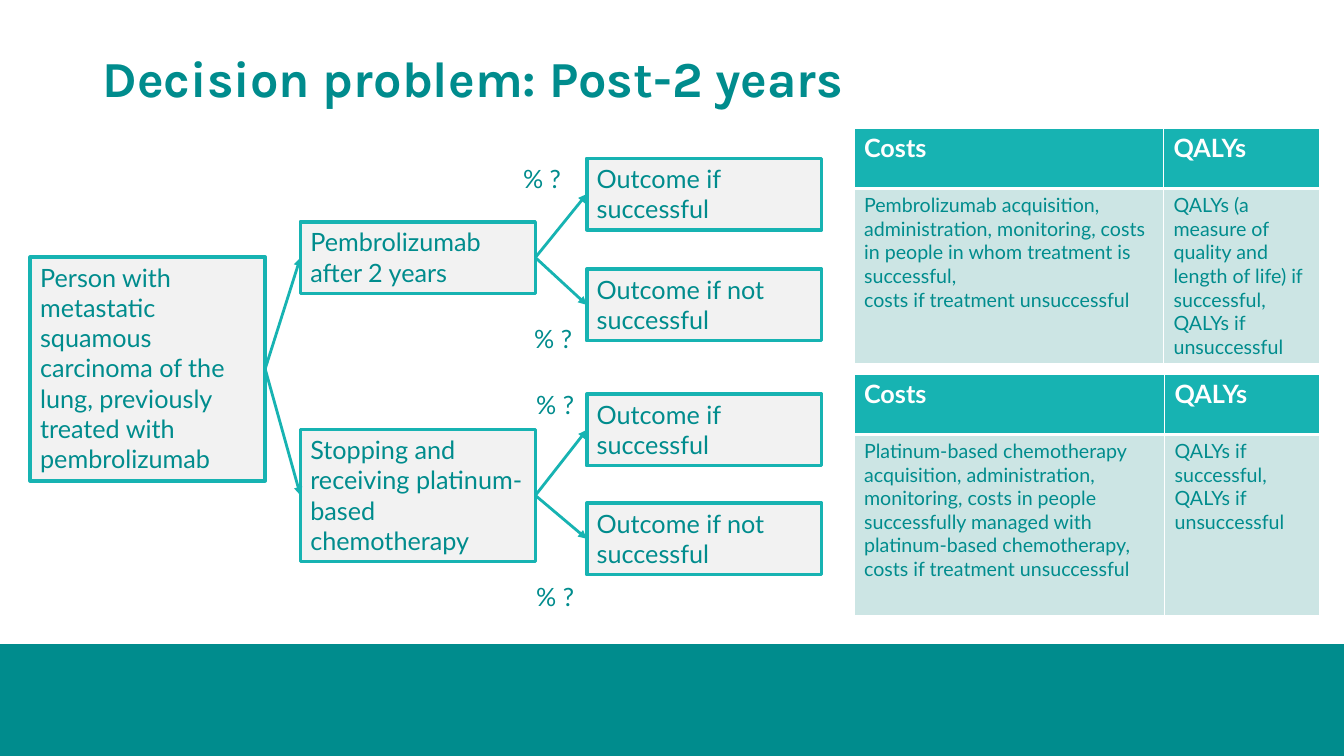
from dataclasses import dataclass

from lxml.etree import SubElement
from pptx import Presentation
from pptx.dml.color import RGBColor
from pptx.enum.shapes import MSO_CONNECTOR, MSO_SHAPE
from pptx.enum.text import MSO_ANCHOR, MSO_AUTO_SIZE
from pptx.oxml.ns import qn
from pptx.shapes.autoshape import Shape
from pptx.slide import Slide
from pptx.table import _Cell
from pptx.text.text import _Paragraph
from pptx.util import Pt

PX = 9144
TEAL = "008C8D"
TURQUOISE = "17B3B2"
PALE_TEAL = "CCE5E4"
GREY = "F2F2F2"
WHITE = "FFFFFF"
LEFT_SITE, RIGHT_SITE = 1, 3
NODE_WIDTH = 233


@dataclass(frozen=True)
class Node:
    key: str
    left: int
    top: int
    height: int
    text: str


@dataclass(frozen=True)
class Label:
    left: int
    top: int
    width: int
    height: int
    text: str
    size: int = 18
    font: str = "Lato"
    bold: bool = False


@dataclass(frozen=True)
class Payoff:
    top: int
    columns: tuple[int, int]
    rows: tuple[int, int]
    costs: tuple[str, ...]
    qalys: tuple[str, ...]


NODES = [
    Node("person", 30, 255, 222, "Person with metastatic squamous carcinoma of the lung, "
         "previously treated with pembrolizumab"),
    Node("continue", 298, 220, 71, "Pembrolizumab after 2 years"),
    Node("stop", 298, 426, 131, "Stopping and receiving platinum-based chemotherapy"),
    Node("continue success", 582, 157, 71, "Outcome if successful"),
    Node("continue failure", 582, 267, 71, "Outcome if not successful"),
    Node("stop success", 582, 391, 71, "Outcome if successful"),
    Node("stop failure", 582, 499, 71, "Outcome if not successful"),
]

BRANCHES = [
    ("person", "continue"),
    ("person", "stop"),
    ("continue", "continue success"),
    ("continue", "continue failure"),
    ("stop", "stop success"),
    ("stop", "stop failure"),
]

PROBABILITIES = [(509, 157), (520, 316), (522, 381), (522, 572)]

PAYOFFS = [
    Payoff(127, (307, 155), (60, 169),
           ("Pembrolizumab acquisition, administration, monitoring, costs in people "
            "in whom treatment is successful,", "costs if treatment unsuccessful"),
           ("QALYs (a measure of quality and length of life) if successful, "
            "QALYs if unsuccessful",)),
    Payoff(371, (308, 154), (60, 180),
           ("Platinum-based chemotherapy acquisition, administration, monitoring, costs in "
            "people successfully managed with platinum-based chemotherapy,",
            "costs if treatment unsuccessful"),
           ("QALYs if successful, QALYs if unsuccessful",)),
]


def rgb(value: str) -> RGBColor:
    return RGBColor.from_string(value)


def add_text(paragraph: _Paragraph, text: str, size: int = 18, color: str = TEAL,
             font: str = "Lato", bold: bool = False) -> None:
    run = paragraph.add_run()
    run.text = text
    run.font.name = font
    run.font.size = Pt(size)
    run.font.bold = bold
    run.font.color.rgb = rgb(color)


def add_rectangle(slide: Slide, left: int, top: int, width: int, height: int, fill: str) -> Shape:
    rectangle = slide.shapes.add_shape(
        MSO_SHAPE.RECTANGLE, left * PX, top * PX, width * PX, height * PX)
    rectangle.shadow.inherit = False
    rectangle.fill.solid()
    rectangle.fill.fore_color.rgb = rgb(fill)
    rectangle.line.fill.background()
    return rectangle


def add_node(slide: Slide, node: Node) -> Shape:
    box = add_rectangle(slide, node.left, node.top, NODE_WIDTH, node.height, GREY)
    box.line.color.rgb = rgb(TURQUOISE)
    box.line.width = Pt(2.5)
    frame = box.text_frame
    frame.word_wrap = True
    frame.auto_size = MSO_AUTO_SIZE.SHAPE_TO_FIT_TEXT
    frame.vertical_anchor = MSO_ANCHOR.TOP
    paragraph = frame.paragraphs[0]
    paragraph.alignment = 1
    add_text(paragraph, node.text)
    return box


def add_branch(slide: Slide, parent: Shape, child: Shape) -> None:
    arrow = slide.shapes.add_connector(MSO_CONNECTOR.STRAIGHT, 0, 0, 0, 0)
    arrow.begin_connect(parent, RIGHT_SITE)
    arrow.end_connect(child, LEFT_SITE)
    arrow.line.color.rgb = rgb(TURQUOISE)
    arrow.line.width = Pt(2)
    properties = arrow.element.spPr
    SubElement(properties.find(qn("a:ln")), qn("a:tailEnd"), type="triangle")
    SubElement(properties, qn("a:effectLst"))


def add_label(slide: Slide, label: Label) -> _Paragraph:
    box = slide.shapes.add_textbox(
        label.left * PX, label.top * PX, label.width * PX, label.height * PX)
    box.text_frame.word_wrap = True
    box.text_frame.vertical_anchor = MSO_ANCHOR.MIDDLE
    paragraph = box.text_frame.paragraphs[0]
    add_text(paragraph, label.text, label.size, font=label.font, bold=label.bold)
    return paragraph


def add_borders(cell: _Cell, bottom: int) -> None:
    properties = cell._tc.get_or_add_tcPr()
    for side, points in {"L": 1, "R": 1, "T": 1, "B": bottom}.items():
        border = SubElement(properties, qn(f"a:ln{side}"), w=str(Pt(points)))
        SubElement(SubElement(border, qn("a:solidFill")), qn("a:srgbClr"), val=WHITE)


def fill_cell(cell: _Cell, lines: tuple[str, ...], header: bool) -> None:
    add_borders(cell, 3 if header else 1)
    cell.fill.solid()
    cell.fill.fore_color.rgb = rgb(TURQUOISE if header else PALE_TEAL)
    frame = cell.text_frame
    for index, line in enumerate(lines):
        paragraph = frame.add_paragraph() if index else frame.paragraphs[0]
        if header:
            add_text(paragraph, line, 18, WHITE, bold=True)
        else:
            add_text(paragraph, line, 14)


def add_payoff(slide: Slide, payoff: Payoff) -> None:
    table = slide.shapes.add_table(
        2, 2, 847 * PX, payoff.top * PX, sum(payoff.columns) * PX, sum(payoff.rows) * PX).table
    for column, width in zip(table.columns, payoff.columns):
        column.width = width * PX
    for row, height in zip(table.rows, payoff.rows):
        row.height = height * PX
    contents = ((("Costs",), ("QALYs",)), (payoff.costs, payoff.qalys))
    for row_index, row_contents in enumerate(contents):
        for column_index, lines in enumerate(row_contents):
            fill_cell(table.cell(row_index, column_index), lines, row_index == 0)


def main() -> None:
    presentation = Presentation()
    presentation.slide_width = 1333 * PX
    presentation.slide_height = 750 * PX
    slide = presentation.slides.add_slide(presentation.slide_layouts[6])

    add_rectangle(slide, 0, 639, 1333, 111, TEAL)
    boxes = {node.key: add_node(slide, node) for node in NODES}
    for parent, child in BRANCHES:
        add_branch(slide, boxes[parent], boxes[child])
    for payoff in PAYOFFS:
        add_payoff(slide, payoff)
    for left, top in PROBABILITIES:
        add_label(slide, Label(left, top, 73, 40, "% ?"))
    title = Label(92, 40, 1150, 81, "Decision problem: Post-2 years", 36, "Karla", True)
    add_label(slide, title).line_spacing = 0.9

    presentation.save("out.pptx")


if __name__ == "__main__":
    main()
